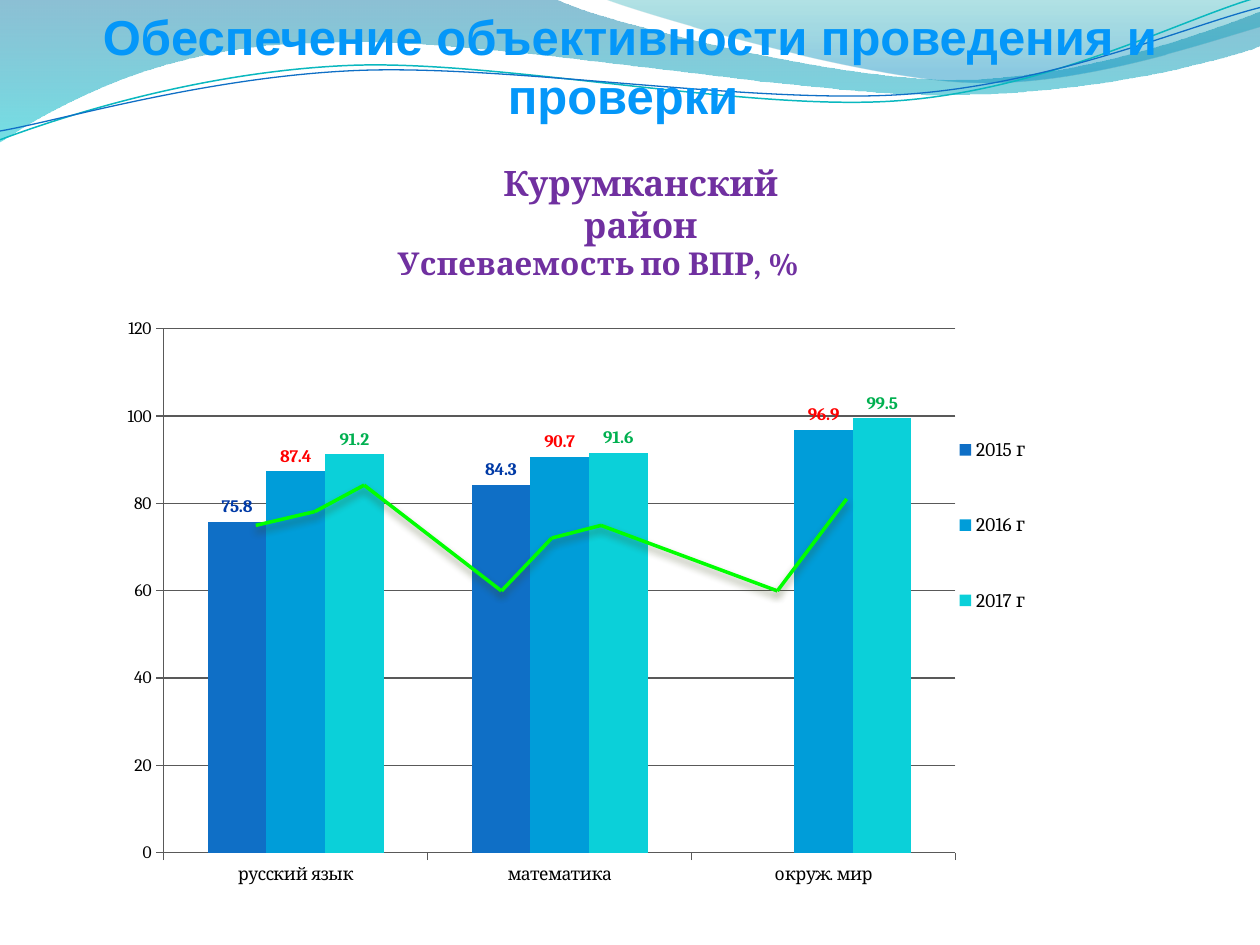
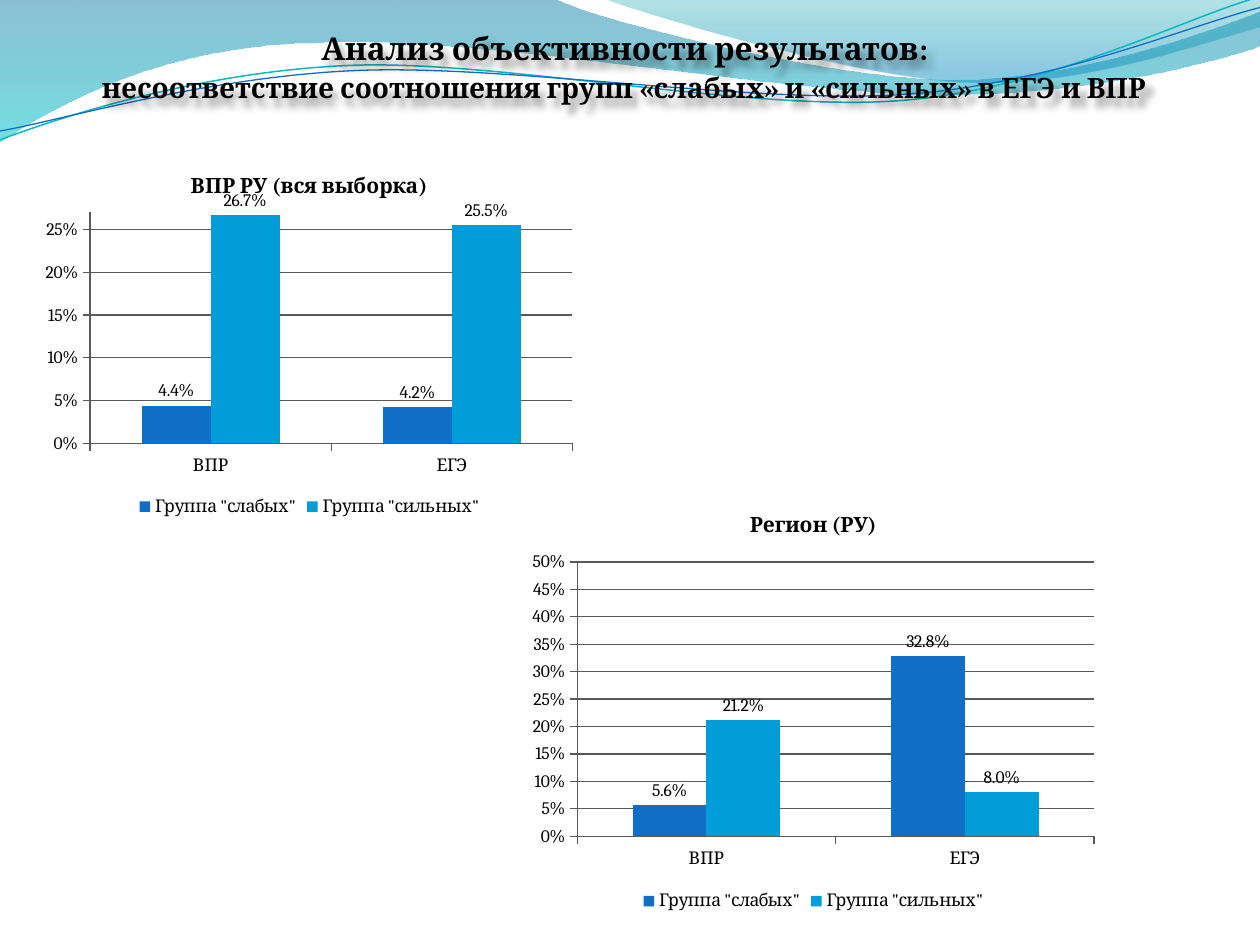
from itertools import pairwise

from lxml import etree
from pptx import Presentation
from pptx.chart.data import CategoryChartData
from pptx.dml.color import RGBColor
from pptx.enum.chart import XL_CHART_TYPE, XL_LABEL_POSITION, XL_LEGEND_POSITION, XL_TICK_MARK
from pptx.enum.shapes import MSO_CONNECTOR
from pptx.enum.text import MSO_ANCHOR, MSO_AUTO_SIZE, PP_ALIGN
from pptx.oxml.ns import qn
from pptx.util import Inches, Pt

COLUMNS = XL_CHART_TYPE.COLUMN_CLUSTERED
OUTSIDE_END = XL_LABEL_POSITION.OUTSIDE_END
LEGEND_RIGHT, LEGEND_BOTTOM = XL_LEGEND_POSITION.RIGHT, XL_LEGEND_POSITION.BOTTOM
TICK_OUT = XL_TICK_MARK.OUTSIDE
STRAIGHT = MSO_CONNECTOR.STRAIGHT
TOP, CENTER, NO_FIT = MSO_ANCHOR.TOP, PP_ALIGN.CENTER, MSO_AUTO_SIZE.NONE

SERIF, SANS = "Cambria", "Arial"
BLACK, GRID, PURPLE, TITLE_BLUE, GREEN = "000000", "595959", "7030A0", "0497F9", "00FF00"
SERIES_COLORS = ["0F6FC6", "009DD9", "0BD0D9"]

# Header waves: a start point, then runs of points; three make a curve, one a line
BANDS = [
    ((0, -0.01),
     [[(4.4, -0.01)],
      [(4.76, 0.17), (6.64, 0.63), (7.58, 0.63)],
      [(8.53, 0.63), (9.58, 0.26), (10, 0.09)],
      [(10.01, 0.36)],
      [(9.83, 0.44), (8.7, 0.76), (7.46, 0.75)],
      [(6.22, 0.75), (3.82, 0.28), (2.57, 0.34)],
      [(1.29, 0.35), (0.46, 0.83), (-0.01, 1.13)],
      [(0, -0.01)]],
     [(0, "0074A1", 45), (1, "00C6CF", 55)]),
    ((4.79, -0.01),
     [[(5.09, 0.11), (6.82, 0.62), (7.69, 0.65)],
      [(8.56, 0.69), (9.61, 0.32), (10, 0.21)],
      [(10, 0)],
      [(4.79, -0.01)]],
     [(0, "00A1A9", 30), (0.8, "008BBF", 45)]),
]
WAVE_LINES = [
    ((0, 1.11),
     [[(0.48, 0.93), (1.58, 0.57), (2.77, 0.52)],
      [(3.95, 0.47), (5.93, 0.89), (7.13, 0.8)],
      [(8.33, 0.71), (9.38, 0.15), (9.98, -0.02)]],
     "0AB8BF", 0.85),
    ((0, 1.04),
     [[(0.47, 0.96), (1.64, 0.61), (2.83, 0.56)],
      [(4.03, 0.51), (5.97, 0.83), (7.17, 0.75)],
      [(8.36, 0.67), (9.41, 0.21), (10, 0.06)]],
     "0F6FC6", 0.75),
]
TREND = [(2.03, 4.17), (2.5, 4.06), (2.89, 3.85), (3.98, 4.69),
         (4.38, 4.27), (4.77, 4.17), (6.17, 4.69), (6.72, 3.96)]


def rgb(value):
    return RGBColor.from_string(value)


def set_all(obj, **values):
    for name, value in values.items():
        setattr(obj, name, value)


def set_font(font, size, color=BLACK, bold=False, name=SERIF):
    set_all(font, size=Pt(size), bold=bold, name=name)
    font.color.rgb = rgb(color)


def add_shadow(shape, color, alpha, blur, dist, angle):
    effects = etree.SubElement(shape.element.spPr, qn("a:effectLst"))
    shadow = etree.SubElement(effects, qn("a:outerShdw"), blurRad=str(Pt(blur)),
                              dist=str(Pt(dist)), dir=str(angle * 60000), rotWithShape="0")
    clr = etree.SubElement(shadow, qn("a:srgbClr"), val=color)
    etree.SubElement(clr, qn("a:alpha"), val=str(alpha * 1000))


# Shared header
def add_outline(s, start, runs, close):
    """Draw the points as a freeform, then join each run of three into a curve."""
    points = [(Inches(x), Inches(y)) for run in runs for x, y in run]
    builder = s.shapes.build_freeform(Inches(start[0]), Inches(start[1]))
    builder.add_line_segments(points, close=close)
    shape = builder.convert_to_shape()
    shape.shadow.inherit = False
    segments = iter(list(shape.element.iter(qn("a:lnTo"))))
    for run in runs:
        first, *rest = [next(segments) for _ in run]
        if rest:
            curve = etree.Element(qn("a:cubicBezTo"))
            first.addprevious(curve)
            for segment in (first, *rest):
                curve.append(segment[0])
                segment.getparent().remove(segment)
    return shape


def add_band(s, start, runs, stops):
    band = add_outline(s, start, runs, True)
    band.line.fill.background()
    band.fill.gradient()
    band.fill.gradient_angle = 270
    for stop, (position, color, _) in zip(band.fill.gradient_stops, stops):
        stop.position = position
        stop.color.rgb = rgb(color)
    for clr, (_, _, alpha) in zip(band.element.spPr.iter(qn("a:srgbClr")), stops):
        etree.SubElement(clr, qn("a:alpha"), val=str(alpha * 1000))
    return band


def add_wave_line(s, start, runs, color, width):
    wave = add_outline(s, start, runs, False)
    wave.fill.background()
    wave.line.color.rgb = rgb(color)
    wave.line.width = Pt(width)
    return wave


def add_header(s):
    """Draw the waves and move them to the layout that all slides share."""
    waves = [add_band(s, *band) for band in BANDS]
    waves += [add_wave_line(s, *line) for line in WAVE_LINES]
    for i, wave in enumerate(waves):
        wave.element.nvSpPr.cNvPr.set("id", str(101 + i))
        s.slide_layout.shapes.element.insert(2 + i, wave.element)


# Text
def write_lines(shape, box, lines):
    """Fill a shape with centred lines, each a list of (text, font format)."""
    set_all(shape, **dict(zip(("left", "top", "width", "height"), map(Inches, box))))
    tf = shape.text_frame
    set_all(tf, word_wrap=True, auto_size=NO_FIT, vertical_anchor=TOP)
    for i, runs in enumerate(lines):
        p = tf.add_paragraph() if i else tf.paragraphs[0]
        p.alignment = CENTER
        for text, fmt in runs:
            r = p.add_run()
            r.text = text
            set_font(r.font, **fmt)


# Charts
def place(parent, box, inner=False):
    """Set a manual layout, in parts of the chart's size."""
    for old in parent.findall(qn("c:layout")):
        parent.remove(old)
    layout = etree.Element(qn("c:layout"))
    manual = etree.SubElement(layout, qn("c:manualLayout"))
    if inner:
        etree.SubElement(manual, qn("c:layoutTarget"), val="inner")
    for name in ("xMode", "yMode"):
        etree.SubElement(manual, qn("c:" + name), val="edge")
    for name, value in zip("xywh", box):
        etree.SubElement(manual, qn("c:" + name), val=str(value))
    # The layout follows the title's text or the legend's position
    before = [parent.find(qn(tag)) for tag in ("c:tx", "c:legendPos")]
    anchor = next((el for el in before if el is not None), None)
    if anchor is None:
        parent.insert(0, layout)
    else:
        anchor.addnext(layout)


def style_axis(axis):
    axis.major_tick_mark = TICK_OUT
    axis.format.line.color.rgb = rgb(GRID)
    axis.format.line.width = Pt(0.75)
    set_font(axis.tick_labels.font, 10)


def add_column_chart(s, box, title, cats, series, plot_box, top, step, legend=LEGEND_BOTTOM,
                     legend_size=10, title_size=12, title_color=BLACK,
                     axis_format="General", label_format="General", label_colors=None):
    data = CategoryChartData()
    data.categories = cats
    for name, values in series:
        data.add_series(name, values)
    chart = s.shapes.add_chart(COLUMNS, *map(Inches, box), data).chart
    set_font(chart.font, 10)

    chart.has_title = True
    p = chart.chart_title.text_frame.paragraphs[0]
    r = p.add_run()
    r.text = title
    set_font(r.font, title_size, title_color, True)

    chart.has_legend = True
    set_all(chart.legend, position=legend, include_in_layout=False)
    set_font(chart.legend.font, legend_size)

    style_axis(chart.category_axis)
    axis = chart.value_axis
    style_axis(axis)
    set_all(axis, minimum_scale=0, maximum_scale=top, major_unit=step, has_major_gridlines=True)
    axis.major_gridlines.format.line.color.rgb = rgb(GRID)
    axis.major_gridlines.format.line.width = Pt(0.75)
    set_all(axis.tick_labels, number_format=axis_format, number_format_is_linked=False)

    plot = chart.plots[0]
    set_all(plot, gap_width=150, overlap=0, vary_by_categories=False)
    for i, (item, color) in enumerate(zip(plot.series, SERIES_COLORS)):
        item.format.fill.solid()
        item.format.fill.fore_color.rgb = rgb(color)
        labels = item.data_labels
        set_all(labels, show_value=True, position=OUTSIDE_END,
                number_format=label_format, number_format_is_linked=False)
        set_font(labels.font, 10, label_colors[i] if label_colors else BLACK, bool(label_colors))
    place(chart.element.chart.plotArea, plot_box, inner=True)
    return chart


def add_trend(s, points):
    for (x1, y1), (x2, y2) in pairwise(points):
        line = s.shapes.add_connector(STRAIGHT, *map(Inches, (x1, y1, x2, y2)))
        line.line.color.rgb = rgb(GREEN)
        line.line.width = Pt(2)
        add_shadow(line, "3A4519", 48, 4.5, 3, 90)


def build_district_slide(s):
    chart = add_column_chart(
        s, (0.86, 1.88, 7.58, 5.25), "Успеваемость по ВПР, %",
        ["русский язык", "математика", "окруж. мир"],
        [("2015 г", (75.8, 84.3, None)),
         ("2016 г", (87.4, 90.7, 96.9)),
         ("2017 г", (91.2, 91.6, 99.5))],
        (0.058, 0.139, 0.829, 0.792), 120, 20, legend=LEGEND_RIGHT, legend_size=11,
        title_size=18, title_color=PURPLE, label_colors=["003AA6", "FF0000", "00B050"])
    place(chart.chart_title._element, (0.297, -0.005))
    place(chart.legend._element, (0.876, 0.226, 0.1, 0.42))
    district = s.shapes.add_textbox(0, 0, 0, 0)
    write_lines(district, (3.7, 1.23, 2.77, 0.58),
                [[("Курумканский район", dict(size=20, color=PURPLE, bold=True))]])
    write_lines(s.shapes.title, (0, 0, 10, 1.39),
                [[("Обеспечение объективности проведения и проверки ",
                   dict(size=28, color=TITLE_BLUE, bold=True, name=SANS))]])
    add_trend(s, TREND)


def build_groups_slide(s):
    large, small = dict(size=18, bold=True), dict(size=16, bold=True)
    write_lines(s.shapes.title, (0.7, 0.18, 8.57, 0.71), [
        [("Анализ объективности результатов: ", large)],
        [("несоответствие соотношения групп «слабых» и «сильных» в ЕГЭ и ВПР", small),
         (" ", large)]])
    add_shadow(s.shapes.title, BLACK, 40, 4, 5, 60)
    charts = [
        ((0.28, 1.23, 4.35, 2.91), "ВПР РУ (вся выборка)", (0.044, 0.042), (0.267, 0.255),
         (0.1, 0.157, 0.88, 0.63), 0.27),
        ((4.13, 3.91, 4.65, 3.36), "Регион (РУ)", (0.056, 0.328), (0.212, 0.08),
         (0.097, 0.164, 0.882, 0.648), 0.5),
    ]
    for box, title, weak, strong, plot_box, top in charts:
        add_column_chart(s, box, title, ["ВПР", "ЕГЭ"],
                         [('Группа "слабых"', weak), ('Группа "сильных"', strong)],
                         plot_box, top, 0.05, axis_format="0%", label_format="0.0%")


def main():
    prs = Presentation()
    set_all(prs, slide_width=Inches(10), slide_height=Inches(7.5))
    title_only = prs.slide_layouts[5]
    district, groups = [prs.slides.add_slide(title_only) for _ in range(2)]
    add_header(district)
    build_district_slide(district)
    build_groups_slide(groups)
    prs.save("out.pptx")


if __name__ == "__main__":
    main()
